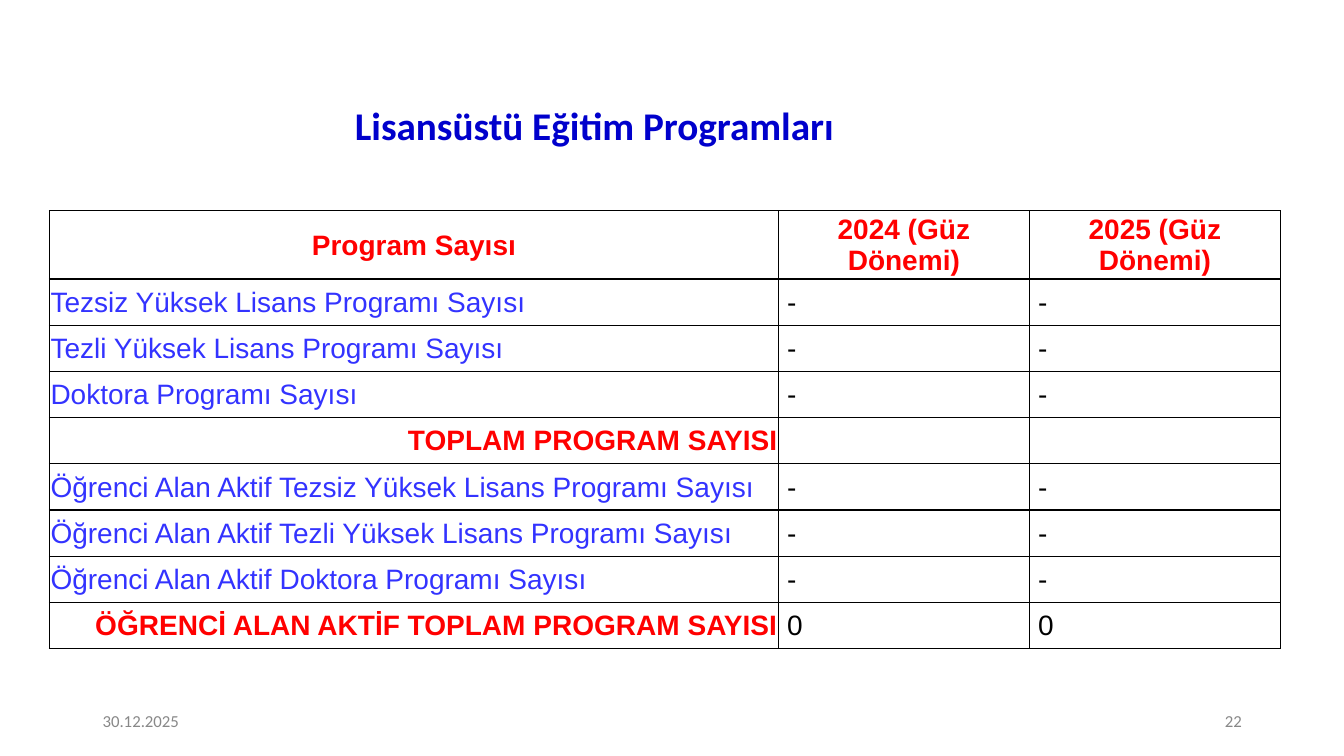
from lxml import etree
from pptx import Presentation
from pptx import util as u
from pptx.dml.color import RGBColor
from pptx.enum import text
from pptx.oxml.ns import qn

COLORS = {"title": "0000CC", "footer": "888888", "heading": "FF0000",
          "program": "3333FF", "value": "000000", "border": "000000"}
ALIGN = text.PP_ALIGN

TEXTS = [
    {"words": "Lisansüstü Eğitim Programları", "box": (10.1, 64.1, 835.2, 54), "right": 13.5,
     "style": "title"},
    {"words": "30.12.2025", "box": (66.2, 500.4, 216, 28.8), "right": 7.2, "style": "date"},
    {"words": "22", "box": (678.2, 500.4, 216, 28.8), "right": 7.2, "style": "number"},
]
HEADINGS = ("Program Sayısı", "2024 (Güz Dönemi)", "2025 (Güz Dönemi)")
PROGRAMS = [
    ("program", "Tezsiz Yüksek Lisans Programı Sayısı", "-", "-"),
    ("program", "Tezli Yüksek Lisans Programı Sayısı", "-", "-"),
    ("program", "Doktora Programı Sayısı", "-", "-"),
    ("total", "TOPLAM PROGRAM SAYISI", "", ""),
    ("program", "Öğrenci Alan Aktif Tezsiz Yüksek Lisans Programı Sayısı", "-", "-"),
    ("program", "Öğrenci Alan Aktif Tezli Yüksek Lisans Programı Sayısı", "-", "-"),
    ("program", "Öğrenci Alan Aktif Doktora Programı Sayısı", "-", "-"),
    ("total", "ÖĞRENCİ ALAN AKTİF TOPLAM PROGRAM SAYISI", "0", "0"),
]
TABLE_LEFT, TABLE_TOP, ROW_HEIGHT = 35.4, 150.5, 33.05
COLUMN_WIDTHS = (520.6, 179.3, 179.3)
CELL_INSET, VALUE_INSET = 0.7, 6.25

STYLES = {
    "title": ("Calibri", 28, True, "title", ALIGN.CENTER, 0.9),
    "date": ("Calibri", 12, False, "footer", ALIGN.LEFT, 1.0),
    "number": ("Calibri", 12, False, "footer", ALIGN.RIGHT, 1.0),
    "heading": ("Arial", 20, True, "heading", ALIGN.CENTER, 1.0),
    "program": ("Arial", 20, False, "program", ALIGN.LEFT, 1.0),
    "total": ("Arial", 20, True, "heading", ALIGN.RIGHT, 1.0),
    "value": ("Arial", 20, False, "value", ALIGN.LEFT, 1.0),
}


def set_all(target, values):
    for name, value in values.items():
        setattr(target, name, value)


def write(frame, words, style):
    font, size, bold, color, alignment, spacing = STYLES[style]
    paragraph = frame.paragraphs[0]
    set_all(paragraph, {"alignment": alignment, "line_spacing": spacing})
    run = paragraph.add_run()
    run.text = words
    set_all(run.font, {"name": font, "size": u.Pt(size), "bold": bold})
    run.font.color.rgb = RGBColor.from_string(COLORS[color])


def add_borders(cell):
    properties = cell._tc.get_or_add_tcPr()
    for position, side in enumerate(("a:lnL", "a:lnR", "a:lnT", "a:lnB")):
        line = etree.Element(qn(side), w=str(u.Pt(1)))
        fill = etree.SubElement(line, qn("a:solidFill"))
        etree.SubElement(fill, qn("a:srgbClr"), val=COLORS["border"])
        properties.insert(position, line)


def add_text(slide, words, box, right, style):
    frame = slide.shapes.add_textbox(*map(u.Pt, box)).text_frame
    set_all(frame, {"word_wrap": True, "vertical_anchor": text.MSO_ANCHOR.MIDDLE,
                    "margin_left": u.Pt(7.2), "margin_right": u.Pt(right),
                    "margin_top": u.Pt(3.6), "margin_bottom": u.Pt(3.6)})
    write(frame, words, style)


def fill_cell(cell, words, style):
    left = VALUE_INSET if style == "value" else CELL_INSET
    set_all(cell, {"vertical_anchor": text.MSO_ANCHOR.MIDDLE,
                   "margin_left": u.Pt(left), "margin_right": u.Pt(CELL_INSET),
                   "margin_top": u.Pt(CELL_INSET), "margin_bottom": 0})
    cell.fill.background()
    add_borders(cell)
    if words:
        write(cell.text_frame, words, style)


def add_program_table(slide):
    rows = [[(words, "heading") for words in HEADINGS]]
    rows += [[(label, style)] + [(value, "value") for value in values]
             for style, label, *values in PROGRAMS]
    table = slide.shapes.add_table(
        len(rows), len(COLUMN_WIDTHS), u.Pt(TABLE_LEFT), u.Pt(TABLE_TOP),
        u.Pt(sum(COLUMN_WIDTHS)), u.Pt(ROW_HEIGHT * len(rows))).table
    set_all(table, {"first_row": False, "horz_banding": False})
    for column, width in zip(table.columns, COLUMN_WIDTHS):
        column.width = u.Pt(width)
    for table_row, contents in zip(table.rows, rows):
        table_row.height = u.Pt(ROW_HEIGHT)
        for cell, (words, style) in zip(table_row.cells, contents):
            fill_cell(cell, words, style)


def main():
    presentation = Presentation()
    set_all(presentation, {"slide_width": u.Pt(960), "slide_height": u.Pt(540)})
    slide = presentation.slides.add_slide(presentation.slide_layouts[6])
    for item in TEXTS:
        add_text(slide, **item)
    add_program_table(slide)
    presentation.save("out.pptx")


if __name__ == "__main__":
    main()
